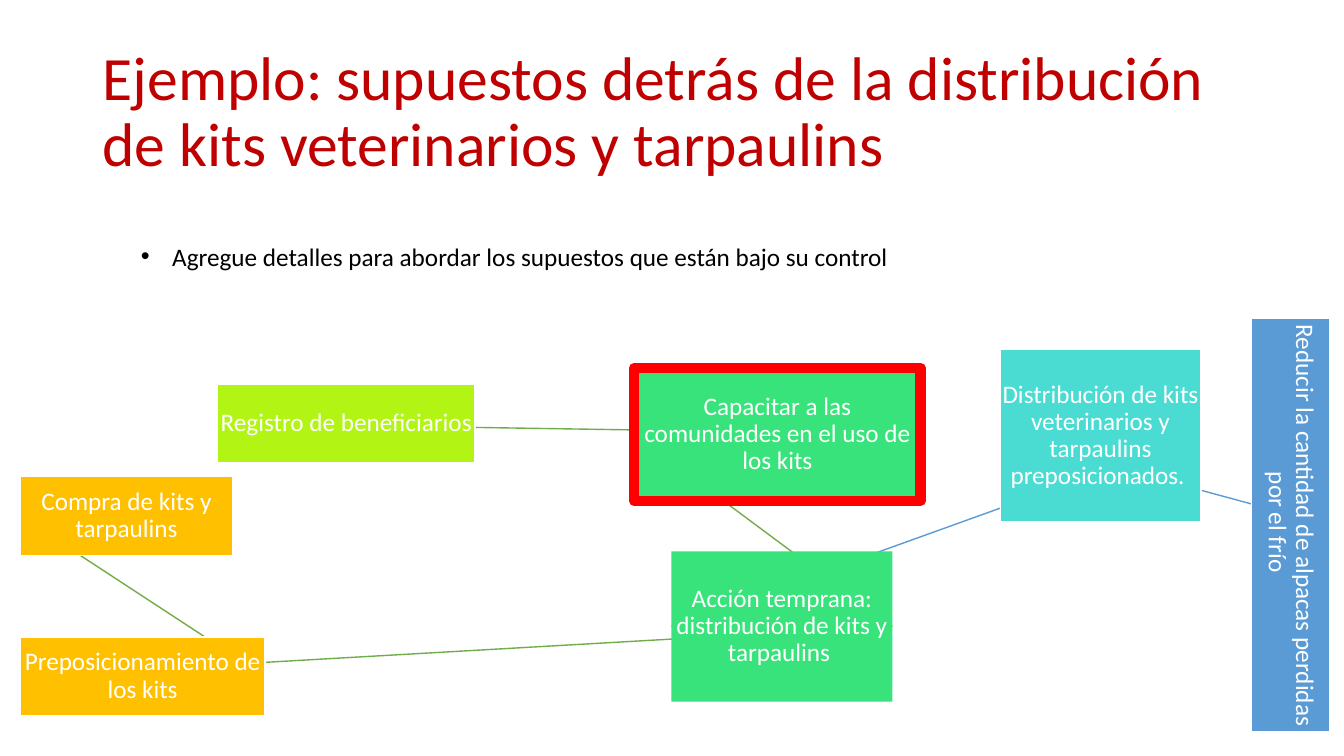
from lxml import etree
from pptx import Presentation
from pptx.dml.color import RGBColor
from pptx.enum.shapes import MSO_CONNECTOR, MSO_SHAPE
from pptx.enum.text import MSO_ANCHOR, PP_ALIGN
from pptx.oxml.ns import qn
from pptx.util import Inches, Pt

STRAIGHT = MSO_CONNECTOR.STRAIGHT
RECTANGLE = MSO_SHAPE.RECTANGLE
MIDDLE = MSO_ANCHOR.MIDDLE
CENTER = PP_ALIGN.CENTER

FONT = "Calibri"
WHITE = RGBColor(0xFF, 0xFF, 0xFF)
BLACK = RGBColor(0x00, 0x00, 0x00)
DARK_RED = RGBColor(0xC0, 0x00, 0x00)
RED = RGBColor(0xFF, 0x00, 0x00)
BLUE = RGBColor(0x5B, 0x9B, 0xD5)
TURQUOISE = RGBColor(0x4A, 0xDC, 0xD2)
GREEN = RGBColor(0x39, 0xE3, 0x7B)
LIME = RGBColor(0xB2, 0xF5, 0x14)
AMBER = RGBColor(0xFF, 0xC0, 0x00)
LINK_GREEN = RGBColor(0x70, 0xAD, 0x47)

TOP, LEFT, RIGHT = 0, 1, 3

STEPS = {
    "goal": ("Reducir la cantidad de alpacas perdidas por el frío ",
             (10.55, 1.66, 4.1, 0.78), BLUE, (WHITE, 1), 90),
    "delivery": ("Distribución de kits veterinarios y tarpaulins preposicionados. ",
                 (9.72, 0.31, 1.99, 1.71), TURQUOISE, (WHITE, 1), 0),
    "action": ("Acción temprana: distribución de kits y tarpaulins ",
               (6.46, 2.31, 2.19, 1.49), GREEN, None, 0),
    "training": ("Capacitar a las comunidades en el uso de los kits",
                 (6.09, 0.49, 2.84, 1.32), GREEN, (RED, 7.25), 0),
    "registry": ("Registro de beneficiarios",
                 (1.96, 0.65, 2.55, 0.78), LIME, (WHITE, 1), 0),
    "stocking": ("Preposicionamiento de los kits",
                 (0, 3.16, 2.43, 0.78), AMBER, (WHITE, 1), 0),
    "purchase": ("Compra de kits y tarpaulins",
                 (0, 1.57, 2.11, 0.78), AMBER, (WHITE, 1), 0),
}

LINKS = [
    ("stocking", "purchase", LINK_GREEN),
    ("action", "stocking", LINK_GREEN),
    ("training", "registry", LINK_GREEN),
    ("action", "training", LINK_GREEN),
    ("delivery", "action", BLUE),
    ("goal", "delivery", BLUE),
]


def write(frame, text, size, color):
    """Put one styled paragraph in a text frame and return it."""
    frame.word_wrap = True
    frame.text = text
    paragraph = frame.paragraphs[0]
    font = paragraph.runs[0].font
    font.name, font.size, font.color.rgb = FONT, Pt(size), color
    return paragraph


def add_title(slide, left, top, width, height):
    """Add the slide heading."""
    heading = slide.shapes.add_textbox(left, top, width, height).text_frame
    heading.vertical_anchor = MIDDLE
    write(heading, "Ejemplo: supuestos detrás de la distribución de kits "
          "veterinarios y tarpaulins", 44, DARK_RED).line_spacing = 0.9


def add_instruction(slide, left, top, width, height):
    """Add the bulleted instruction."""
    instruction = slide.shapes.add_textbox(left, top, width, height).text_frame
    paragraph = write(instruction, "Agregue detalles para abordar los supuestos "
                      "que están bajo su control", 18, BLACK)
    properties = paragraph._p.get_or_add_pPr()
    properties.set("marL", str(Inches(0.31)))
    properties.set("indent", str(-Inches(0.31)))
    etree.SubElement(properties, qn("a:buFont")).set("typeface", "Arial")
    etree.SubElement(properties, qn("a:buChar")).set("char", "•")


def add_link(slide, color):
    """Add a thin line, to be joined to its steps later."""
    link = slide.shapes.add_connector(STRAIGHT, 0, 0, 0, 0)
    link.line.color.rgb = color
    link.line.width = Pt(1)
    etree.SubElement(link.element.spPr, qn("a:effectLst"))
    return link


def add_step(slide, left, top, width, height, text, fill, border, rotation):
    """Add one step of the flow."""
    step = slide.shapes.add_shape(RECTANGLE, left, top, width, height)
    step.shadow.inherit = False
    step.rotation = rotation
    step.fill.solid()
    step.fill.fore_color.rgb = fill
    if border:
        step.line.color.rgb, step.line.width = border[0], Pt(border[1])
    else:
        step.line.fill.background()
    label = step.text_frame
    label.margin_left = label.margin_right = Inches(0.01)
    label.margin_top = label.margin_bottom = Inches(0.01)
    label.vertical_anchor = MIDDLE
    paragraph = write(label, text, 18, WHITE)
    paragraph.alignment = CENTER
    paragraph.line_spacing = 0.9
    return step


def join(link, later, earlier):
    """Join a link from the right of the later step to the left of the earlier one."""
    link.begin_connect(later, TOP if later.rotation else RIGHT)
    if later.rotation:
        link.begin_x = later.left + (later.width + later.height) // 2
        link.begin_y = later.top + later.height // 2
    link.end_connect(earlier, LEFT)


def add_flow(slide, left, top):
    """Add the steps, with their links behind them."""
    links = [add_link(slide, color) for _, _, color in LINKS]
    steps = {}
    for key, (text, (x, y, width, height), fill, border, rotation) in STEPS.items():
        steps[key] = add_step(slide, left + Inches(x), top + Inches(y), Inches(width),
                              Inches(height), text, fill, border, rotation)
    for link, (later, earlier, _) in zip(links, LINKS):
        join(link, steps[later], steps[earlier])


def main():
    """Build and save the slide."""
    deck = Presentation()
    deck.slide_width, deck.slide_height = Inches(13.33), Inches(7.5)
    slide = deck.slides.add_slide(deck.slide_layouts[6])
    add_title(slide, Inches(0.92), Inches(0.4), Inches(11.5), Inches(1.45))
    add_flow(slide, Inches(0.2), Inches(3.16))
    add_instruction(slide, Inches(1.3), Inches(2.34), Inches(10.59), Inches(0.4))
    deck.save("out.pptx")


if __name__ == "__main__":
    main()
